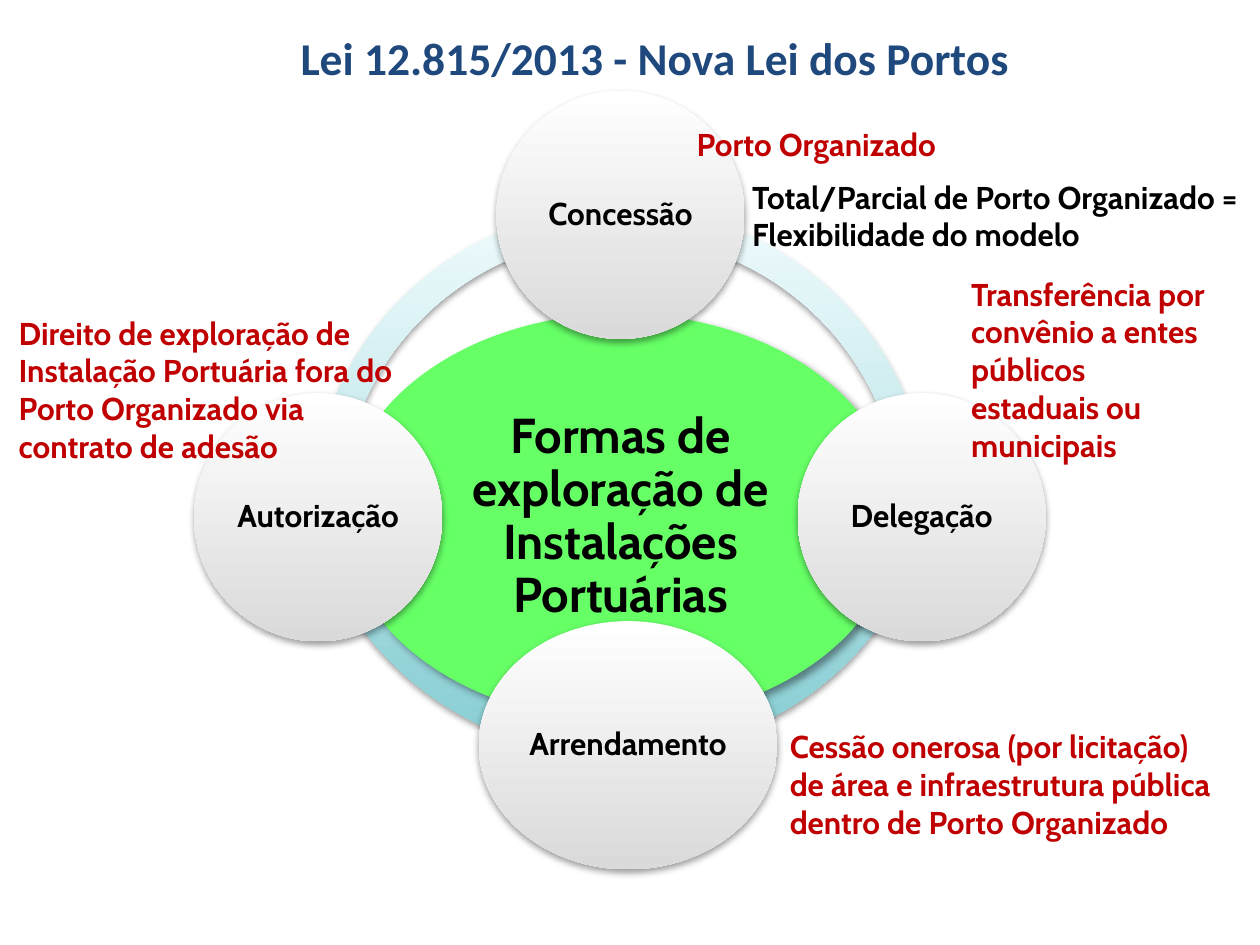
from lxml import etree
from pptx import Presentation
from pptx.dml.color import RGBColor
from pptx.enum import shapes, text
from pptx.oxml.ns import qn
from pptx.util import Inches, Pt

COLORS = {"title": "1F497D", "black": "000000", "red": "C00000", "core": "66FF66",
          "ring": ("EFFBFC", "87CDD3"), "node": ("FFFFFF", "DADADA")}
TITLE = "Lei 12.815/2013 - Nova Lei dos Portos"
CORE = ("Formas de exploração de Instalações Portuárias", (2.72, 2.49, 4.41, 3.23))

RING, BAND = 4.91, 0.046
# left, top, start and end angle in degrees
ARCS = [(2.47, 1.65, 180, 270), (2.39, 1.07, 90, 180),
        (2.54, 1.06, 0, 90), (2.47, 1.65, 270, 0)]

NODE = 1.97
# label, left, top, width
NODES = [("Concessão", 3.94, 0.72, NODE), ("Delegação", 6.33, 3.12, NODE),
         ("Arrendamento", 3.8, 4.93, 2.37), ("Autorização", 1.54, 3.12, NODE)]

NOTES = [
    ("Porto Organizado", (5.43, 0.94, 2.13, 0.4), "red"),
    ("Transferência por convênio a entes públicos estaduais ou municipais",
     (7.61, 2.13, 2.13, 1.62), "red"),
    ("Cessão onerosa (por licitação) de área e infraestrutura pública dentro de "
     "Porto Organizado", (6.17, 5.72, 3.54, 1.31), "red"),
    ("Direito de exploração de Instalação Portuária fora do Porto Organizado via "
     "contrato de adesão", (0.05, 2.44, 3.23, 1.31), "red"),
    ("Total/Parcial de Porto Organizado =\nFlexibilidade do modelo",
     (5.87, 1.36, 4.09, 0.71), "black"),
]

prs = Presentation()
prs.slide_width, prs.slide_height = Inches(10), Inches(7.5)
slide = prs.slides.add_slide(prs.slide_layouts[6])


def write(shape, words, size, color, font="Cabin", center=False, inset=None):
    frame = shape.text_frame
    frame.text = words
    frame.word_wrap = True
    if center:
        frame.vertical_anchor = text.MSO_ANCHOR.MIDDLE
    if inset is not None:
        frame.margin_left = frame.margin_right = Inches(inset)
        frame.margin_top = frame.margin_bottom = Inches(inset)
    for para in frame.paragraphs:
        para.alignment = text.PP_ALIGN.CENTER if center else text.PP_ALIGN.LEFT
        if inset is not None:
            para.line_spacing = 0.9
        for run in para.runs:
            run.font.name, run.font.size, run.font.bold = font, Pt(size), True
            run.font.color.rgb = RGBColor.from_string(COLORS[color])


def draw(kind, box, fill, dist=2, angle=90, alpha=38):
    """Add a borderless shape with a flat or top-down gradient fill and a shadow."""
    shape = slide.shapes.add_shape(kind, *map(Inches, box))
    paint = COLORS[fill]
    if isinstance(paint, str):
        shape.fill.solid()
        shape.fill.fore_color.rgb = RGBColor.from_string(paint)
    else:
        shape.fill.gradient()
        shape.fill.gradient_angle = 270
        for stop, pos, color in zip(shape.fill.gradient_stops, (0, 1), paint):
            stop.position = pos
            stop.color.rgb = RGBColor.from_string(color)
    shape.line.fill.background()
    shape.shadow.inherit = False
    effects = shape.element.spPr.find(qn("a:effectLst"))
    cast = etree.SubElement(effects, qn("a:outerShdw"), blurRad=str(Pt(4)),
                            dist=str(Pt(dist)), dir=str(angle * 60000), rotWithShape="0")
    tint = etree.SubElement(cast, qn("a:srgbClr"), val=COLORS["black"])
    etree.SubElement(tint, qn("a:alpha"), val=str(alpha * 1000))
    return shape


def label(box, words, size, color, **style):
    area = slide.shapes.add_textbox(*map(Inches, box))
    write(area, words, size, color, **style)
    return area


label((0.7, 0.03, 9, 0.85), TITLE, 26, "title", font="Calibri", center=True)

for left, top, start, end in ARCS:
    arc = draw(shapes.MSO_SHAPE.BLOCK_ARC, (left, top, RING, RING), "ring")
    # angles are stored in 60000ths of a degree, adjustments in 100000ths
    for i, value in enumerate((start * 0.6, end * 0.6, BAND)):
        arc.adjustments[i] = value

words, box = CORE
core = draw(shapes.MSO_SHAPE.OVAL, box, "core", dist=3, angle=45, alpha=40)
write(core, words, 28, "black", center=True, inset=0.04)

for words, left, top, width in NODES:
    node = draw(shapes.MSO_SHAPE.OVAL, (left, top, width, NODE), "node")
    write(node, words, 18, "black", center=True, inset=0.03)

for words, box, color in NOTES:
    note = label(box, words, 18, color)
    note.text_frame.auto_size = text.MSO_AUTO_SIZE.SHAPE_TO_FIT_TEXT

prs.save("out.pptx")
